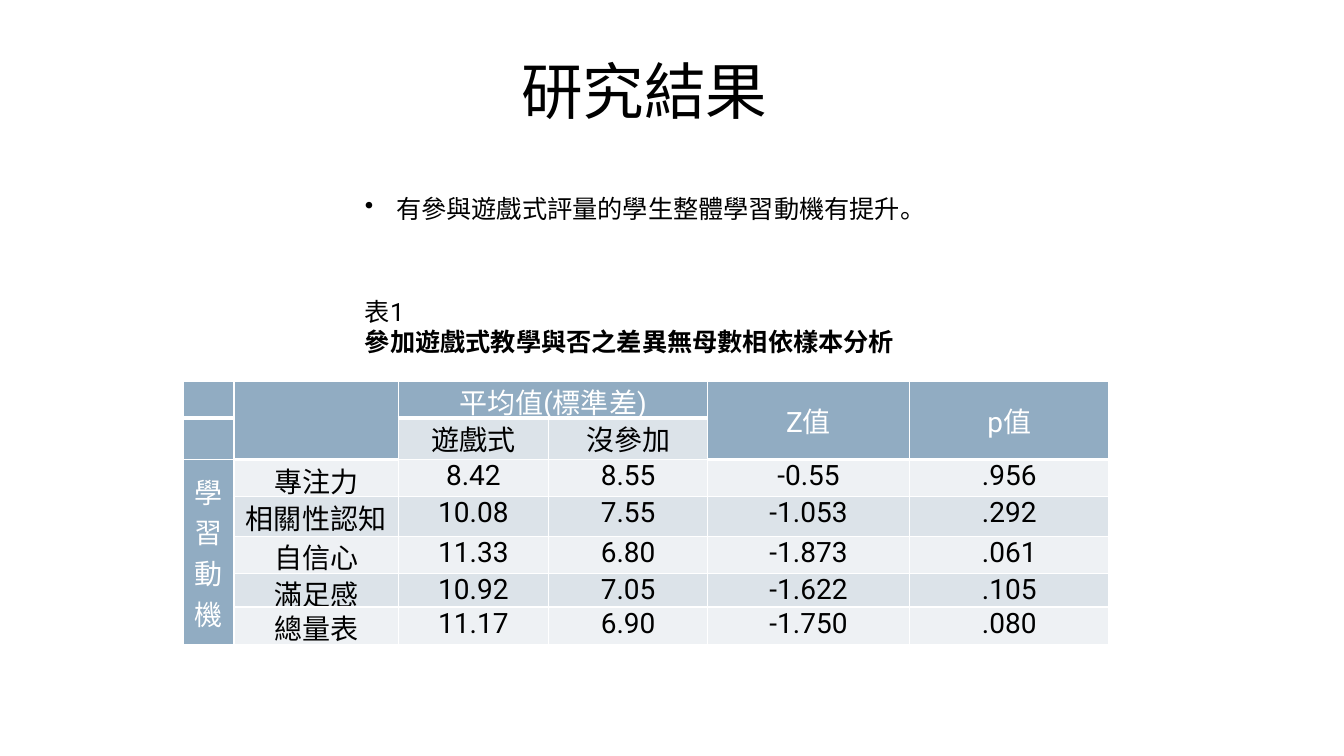
from dataclasses import dataclass

from lxml import etree
from pptx import Presentation
from pptx import util as u
from pptx.dml.color import RGBColor
from pptx.enum import text
from pptx.oxml import ns

PX = 9144


@dataclass(frozen=True)
class Theme:
    """Colours, type sizes and the font of the slide."""
    font: str = "Roboto"
    black: str = "000000"
    white: str = "FFFFFF"
    header: str = "91ACC2"
    light: str = "EEF1F4"
    dark: str = "DCE3E9"
    title: int = 44
    body: int = 18
    table: int = 20


THEME = Theme()
COLUMNS = [50, 163, 149, 158, 200, 198]
ROWS = [37, 41, 37, 39, 37, 33, 37]
CELLS = [
    ["", "", "平均值(標準差)", "", "Z值", "p值"],
    ["", "", "遊戲式", "沒參加", "", ""],
    ["學\n習\n動\n機", "專注力", "8.42", "8.55", "-0.55", ".956"],
    ["", "相關性認知", "10.08", "7.55", "-1.053", ".292"],
    ["", "自信心", "11.33", "6.80", "-1.873", ".061"],
    ["", "滿足感", "10.92", "7.05", "-1.622", ".105"],
    ["", "總量表", "11.17", "6.90", "-1.750", ".080"],
]
MERGES = [((0, 1), (1, 1)), ((0, 2), (0, 3)), ((0, 4), (1, 4)),
          ((0, 5), (1, 5)), ((2, 0), (6, 0))]


def px(length):
    """Turn px into EMU."""
    return u.Emu(length * PX)


def style(paragraph, size, color, bold=False):
    """Set the font of a paragraph."""
    font = paragraph.font
    font.name, font.size, font.bold = THEME.font, u.Pt(size), bold
    font.color.rgb = RGBColor.from_string(color)


def add_bullet(paragraph):
    """Give a paragraph a hanging round bullet."""
    properties = paragraph._p.get_or_add_pPr()
    properties.set("marL", str(px(31)))
    properties.set("indent", str(-px(31)))
    etree.SubElement(properties, ns.qn("a:buChar")).set("char", "•")


def add_text(page, place, lines, size, wrap=True, bullet=False, bold_line=None):
    """Add a text box with one paragraph for each line."""
    box = page.shapes.add_textbox(*map(px, place))
    frame = box.text_frame
    frame.word_wrap = wrap
    frame.auto_size = text.MSO_AUTO_SIZE.SHAPE_TO_FIT_TEXT
    frame.text = "\n".join(lines)
    for index, paragraph in enumerate(frame.paragraphs):
        if bullet:
            add_bullet(paragraph)
        style(paragraph, size, THEME.black, index == bold_line)


def add_borders(cell, bottom):
    """Draw white lines on the four sides of a cell."""
    properties = cell._tc.get_or_add_tcPr()
    for side, width in (("L", 1), ("R", 1), ("T", 1), ("B", bottom)):
        line = etree.SubElement(properties, ns.qn(f"a:ln{side}"), w=str(u.Pt(width)))
        fill = etree.SubElement(line, ns.qn("a:solidFill"))
        etree.SubElement(fill, ns.qn("a:srgbClr"), val=THEME.white)


def fill_cell(cell, row, column, value):
    """Write and colour one table cell."""
    is_header = row == 0 or column == 0 or (row == 1 and column not in (2, 3))
    band = THEME.dark if row % 2 else THEME.light
    add_borders(cell, 1 if row else 3)
    cell.fill.solid()
    cell.fill.fore_color.rgb = RGBColor.from_string(THEME.header if is_header else band)
    cell.margin_left = cell.margin_right = px(7)
    cell.margin_top = cell.margin_bottom = 0
    if is_header and (column == 0 or column > 3):
        cell.vertical_anchor = text.MSO_ANCHOR.MIDDLE
    cell.text_frame.text = value
    for paragraph in cell.text_frame.paragraphs:
        paragraph.alignment = text.PP_ALIGN.CENTER
        style(paragraph, THEME.table, THEME.white if is_header else THEME.black)


def add_results(page, left, top):
    """Add the table of test results."""
    frame = page.shapes.add_table(len(ROWS), len(COLUMNS), px(left), px(top),
                                  px(sum(COLUMNS)), px(sum(ROWS)))
    table = frame.table
    table.first_row = table.horz_banding = False
    for column, width in zip(table.columns, COLUMNS):
        column.width = px(width)
    for row, height in zip(table.rows, ROWS):
        row.height = px(height)
    for row, values in enumerate(CELLS):
        for column, value in enumerate(values):
            fill_cell(table.cell(row, column), row, column, value)
    for first, last in MERGES:
        table.cell(*first).merge(table.cell(*last))


def main():
    """Build the slide and save it."""
    deck = Presentation()
    deck.slide_width, deck.slide_height = px(1333), px(750)
    page = deck.slides.add_slide(deck.slide_layouts[6])
    add_text(page, (507, 48, 267, 84), ["研究結果"], THEME.title, wrap=False)
    add_text(page, (352, 187, 667, 71), ["有參與遊戲式評量的學生整體學習動機有提升。"],
             THEME.body, bullet=True)
    add_text(page, (352, 289, 667, 71), ["表1", "參加遊戲式教學與否之差異無母數相依樣本分析"],
             THEME.body, bold_line=1)
    add_results(page, 182, 378)
    deck.save("out.pptx")


if __name__ == "__main__":
    main()
